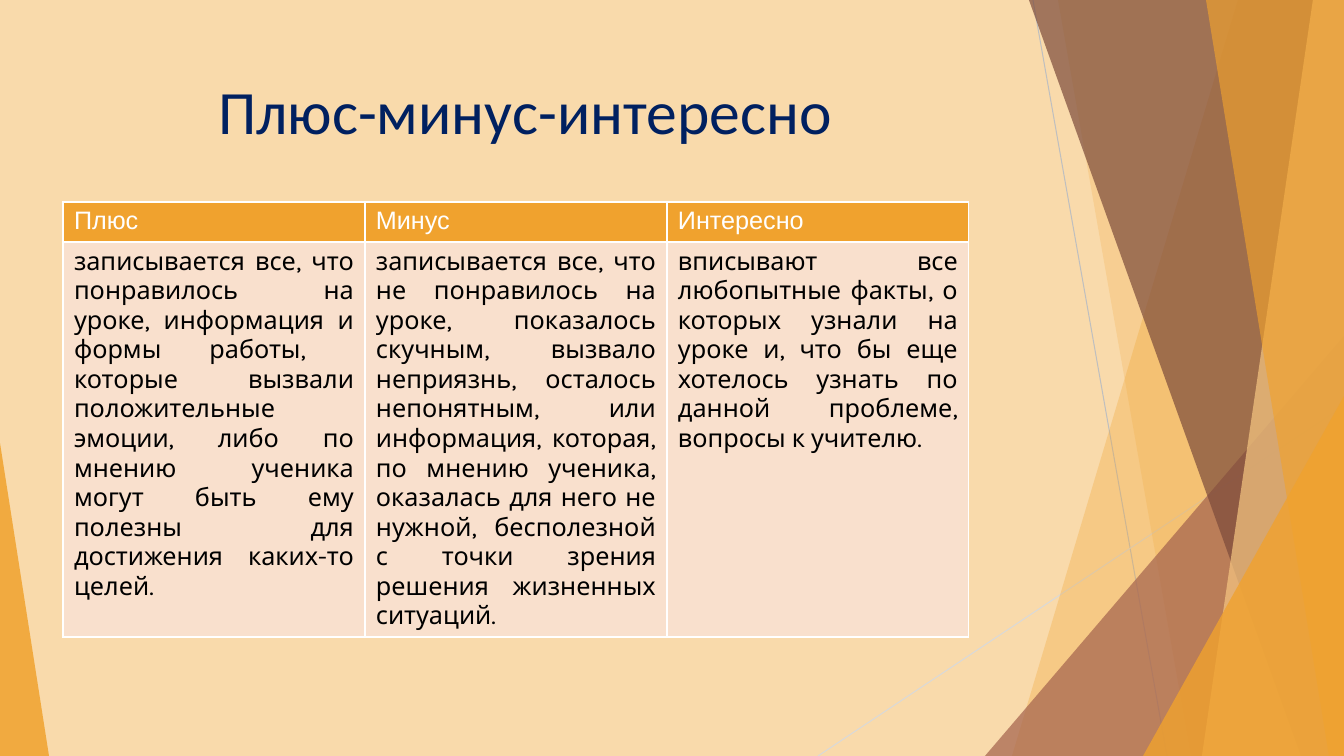
from lxml.etree import SubElement
from pptx import Presentation
from pptx.dml.color import RGBColor
from pptx.enum.shapes import MSO_CONNECTOR, MSO_SHAPE
from pptx.enum.text import MSO_ANCHOR, PP_ALIGN
from pptx.oxml.ns import qn
from pptx.util import Pt

# Content
TITLE = "Плюс-минус-интересно"
COLUMNS = [
    ("Плюс", "записывается все, что понравилось на уроке, информация и формы работы,  "
             "которые вызвали положительные эмоции, либо по мнению ученика могут быть ему "
             "полезны для достижения каких-то целей."),
    ("Минус", "записывается все, что не понравилось на уроке, показалось скучным, вызвало "
              "неприязнь, осталось непонятным, или информация, которая, по мнению ученика, "
              "оказалась для него не нужной, бесполезной с точки зрения решения жизненных "
              "ситуаций."),
    ("Интересно", "вписывают все любопытные факты, о которых узнали на уроке и, что бы еще "
                  "хотелось узнать по данной проблеме, вопросы к учителю."),
]

# Measures in px
PX = 914400 / 100.8
WIDTH, HEIGHT = 1344, 756
TITLE_BOX = (208, 68, 948, 145)
TABLE_LEFT, TABLE_TOP, COLUMN_WIDTH = 63, 202, 302
ROW_HEIGHTS = (40, 395)
CELL_MARGINS = (11, 5)

# Colours
BACKGROUND, NAVY, WHITE, BLACK = "F9DAAB", "002060", "FFFFFF", "000000"
ORANGE, LIGHT_ORANGE, RUST, BROWN = "F0A22E", "F6C782", "A5644E", "7C4B3B"
BODY_FILL = "F9E0CD"

# Decoration: lines (start, end, colour), bands (top x, bottom x, colour, opacity %)
# and triangles (box, tip position, colour, opacity %), from back to front
LINES = [
    ((1033, 0), (1167, HEIGHT), "BFBFBF"),
    ((WIDTH, 406), (818, HEIGHT), "D9D9D9"),
]
BACK_BANDS = [(1238, 1012, ORANGE, 30), (1058, 1191, ORANGE, 20)]
RUST_TRIANGLE = [((985, 336, 359, 420), 1, RUST, 72)]
FRONT_BANDS = [
    (1029, 1301, BROWN, 70),
    (1313, 1202, LIGHT_ORANGE, 70),
    (1206, 1329, ORANGE, 65),
]
FRONT_TRIANGLES = [
    ((1143, 396, 201, 360), 1, ORANGE, 80),
    ((0, 443, 49, 313), 0, ORANGE, 85),
]


def emu(*lengths):
    return [round(length * PX) for length in lengths]


def color(hex_string):
    return RGBColor.from_string(hex_string)


def paint(shape, fill, opacity):
    shape.shadow.inherit = False
    shape.line.fill.background()
    shape.fill.solid()
    shape.fill.fore_color.rgb = color(fill)
    fill_color = shape.fill._xPr.find(qn("a:solidFill"))[0]
    SubElement(fill_color, qn("a:alpha"), val=str(opacity * 1000))


def add_line(shapes, start, end, stroke):
    line = shapes.add_connector(MSO_CONNECTOR.STRAIGHT, *emu(*start, *end))
    line.line.color.rgb = color(stroke)
    line.line.width = Pt(0.75)
    SubElement(line._element.spPr, qn("a:effectLst"))


def add_band(shapes, top_x, bottom_x, fill, opacity):
    builder = shapes.build_freeform(top_x, 0, scale=PX)
    builder.add_line_segments([(WIDTH, 0), (WIDTH, HEIGHT), (bottom_x, HEIGHT)])
    paint(builder.convert_to_shape(), fill, opacity)


def add_triangle(shapes, box, tip, fill, opacity):
    triangle = shapes.add_shape(MSO_SHAPE.ISOSCELES_TRIANGLE, *emu(*box))
    triangle.adjustments[0] = tip
    paint(triangle, fill, opacity)


def format_runs(paragraph, font_name, size, font_color):
    for run in paragraph.runs:
        run.font.name = font_name
        run.font.size = Pt(size)
        run.font.bold = False
        run.font.color.rgb = color(font_color)


def fill_cell(cell, text, font_name, font_color, fill, alignment):
    cell.margin_left = cell.margin_right = emu(CELL_MARGINS[0])[0]
    cell.margin_top = cell.margin_bottom = emu(CELL_MARGINS[1])[0]
    cell.text_frame.text = text
    paragraph = cell.text_frame.paragraphs[0]
    paragraph.alignment = alignment
    format_runs(paragraph, font_name, 18, font_color)
    # Borders come before the fill in the cell properties
    properties = cell._tc.get_or_add_tcPr()
    for side in ("a:lnL", "a:lnR", "a:lnT", "a:lnB"):
        border = SubElement(properties, qn(side), w=str(Pt(1)))
        SubElement(SubElement(border, qn("a:solidFill")), qn("a:srgbClr"), val=WHITE)
    cell.fill.solid()
    cell.fill.fore_color.rgb = color(fill)


def add_title(slide):
    title = slide.shapes.title
    title.left, title.top, title.width, title.height = emu(*TITLE_BOX)
    title.text_frame.text = TITLE
    title.text_frame.vertical_anchor = MSO_ANCHOR.TOP
    paragraph = title.text_frame.paragraphs[0]
    paragraph.alignment = PP_ALIGN.LEFT
    format_runs(paragraph, "Calibri", 44, NAVY)
    # Bring the title in front of the decoration
    slide.shapes._spTree.append(title._element)


def add_comparison_table(shapes):
    box = emu(TABLE_LEFT, TABLE_TOP, COLUMN_WIDTH * len(COLUMNS), sum(ROW_HEIGHTS))
    table = shapes.add_table(len(ROW_HEIGHTS), len(COLUMNS), *box).table
    table.horz_banding = False
    for row, height in zip(table.rows, emu(*ROW_HEIGHTS)):
        row.height = height
    for index, (heading, description) in enumerate(COLUMNS):
        table.columns[index].width = emu(COLUMN_WIDTH)[0]
        fill_cell(table.cell(0, index), heading, "Arial", WHITE, ORANGE, PP_ALIGN.LEFT)
        fill_cell(table.cell(1, index), description, "Karla", BLACK, BODY_FILL,
                  PP_ALIGN.JUSTIFY)


def main():
    presentation = Presentation()
    presentation.slide_width, presentation.slide_height = emu(WIDTH, HEIGHT)
    slide = presentation.slides.add_slide(presentation.slide_layouts[5])
    slide.background.fill.solid()
    slide.background.fill.fore_color.rgb = color(BACKGROUND)

    # Decoration
    for add_part, parts in [
        (add_line, LINES),
        (add_band, BACK_BANDS),
        (add_triangle, RUST_TRIANGLE),
        (add_band, FRONT_BANDS),
        (add_triangle, FRONT_TRIANGLES),
    ]:
        for part in parts:
            add_part(slide.shapes, *part)

    # Title and table
    add_title(slide)
    add_comparison_table(slide.shapes)
    presentation.save("out.pptx")


if __name__ == "__main__":
    main()
